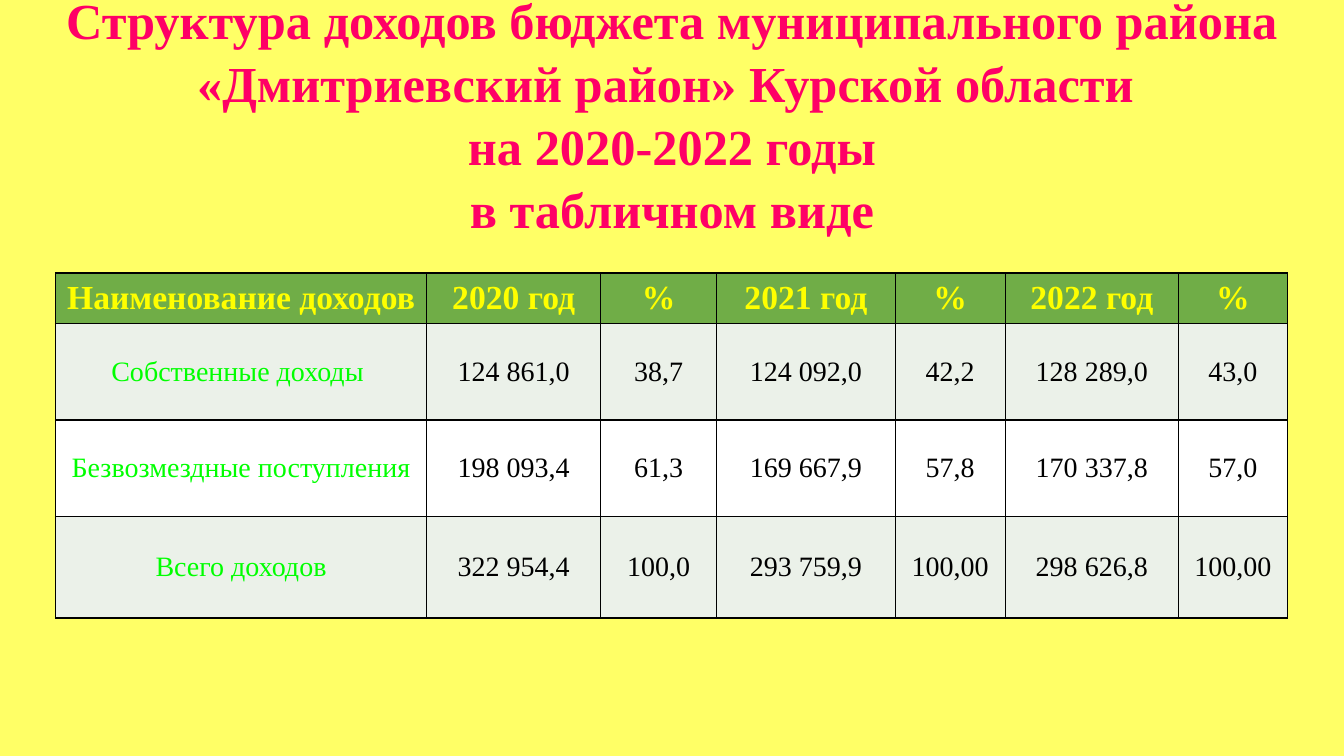
from lxml.etree import SubElement as Sub
from pptx import Presentation
from pptx.dml.color import RGBColor as Rgb
from pptx.enum.text import MSO_ANCHOR as Anchor, PP_ALIGN as Align
from pptx.oxml import parse_xml
from pptx.oxml.ns import nsdecls, qn
from pptx.util import Cm, Pt

hues = {"back": "FFFF66", "title": "FF0066", "head": "70AD47", "year": "FFFF00",
        "name": "00FF00", "band": "EBF1E9", "plain": "FFFFFF", "ink": "000000"}
title = ("Структура доходов бюджета муниципального района "
         "«Дмитриевский район» Курской области \vна 2020-2022 годы\vв табличном виде")
data = [
    ["Наименование доходов", "2020 год", "%", "2021 год", "%", "2022 год", "%"],
    ["Собственные доходы ", "124 861,0", "38,7", "124 092,0", "42,2", "128 289,0", "43,0"],
    ["Безвозмездные поступления", "198 093,4", "61,3", "169 667,9", "57,8", "170 337,8", "57,0"],
    ["Всего доходов", "322 954,4", "100,0", "293 759,9", "100,00", "298 626,8", "100,00"],
]
widths = [9.35, 4.39, 2.92, 4.5, 2.77, 4.37, 2.74]
heights = [1.19, 2.43, 2.43, 2.56]
fills = ["head", "band", "plain", "band"]


def write(frame, text, size, hue, bold=False, edge=False):
    para = frame.paragraphs[0]
    para.text = text
    para.alignment = Align.CENTER
    font = para.font
    font.name, font.size, font.bold = "Times New Roman", Pt(size), bold
    font.color.rgb = Rgb.from_string(hues[hue])
    if edge:
        props = para._p.pPr.find(qn("a:defRPr"))
        props.insert(0, parse_xml(
            f'<a:ln {nsdecls("a")} w="9525"><a:solidFill>'
            f'<a:srgbClr val="{hues["ink"]}"/></a:solidFill></a:ln>'))
    return para


def border(cell):
    props = cell._tc.get_or_add_tcPr()
    for spot, side in enumerate(["lnL", "lnR", "lnT", "lnB"]):
        line = Sub(props, qn(f"a:{side}"), w="12700")
        fill = Sub(line, qn("a:solidFill"))
        Sub(fill, qn("a:srgbClr"), val=hues["ink"])
        props.insert(spot, line)


deck = Presentation()
deck.slide_width, deck.slide_height = Cm(33.87), Cm(19.05)
slide = deck.slides.add_slide(deck.slide_layouts[6])
back = slide.background.fill
back.solid()
back.fore_color.rgb = Rgb.from_string(hues["back"])

box = slide.shapes.add_textbox(Cm(0), Cm(0), Cm(33.87), Cm(5.69)).text_frame
box.word_wrap = True
box.vertical_anchor = Anchor.MIDDLE
write(box, title, 36, "title", True, True).line_spacing = 1.04

grid = slide.shapes.add_table(len(data), len(widths), Cm(1.4), Cm(6.88),
                              Cm(sum(widths)), Cm(sum(heights))).table
for col, width in zip(grid.columns, widths):
    col.width = Cm(width)
for row, height in zip(grid.rows, heights):
    row.height = Cm(height)

for r, line in enumerate(data):
    for c, text in enumerate(line):
        cell = grid.cell(r, c)
        cell.fill.solid()
        cell.fill.fore_color.rgb = Rgb.from_string(hues[fills[r]])
        cell.vertical_anchor = Anchor.MIDDLE
        border(cell)
        if r == 0:
            write(cell.text_frame, text, 24, "year", True)
            continue
        if c > 2:
            cell.margin_left = cell.margin_right = Cm(0.18)
            cell.margin_top = cell.margin_bottom = Cm(0)
        write(cell.text_frame, text, 20, "ink" if c else "name", edge=c == 0)

deck.save("out.pptx")
